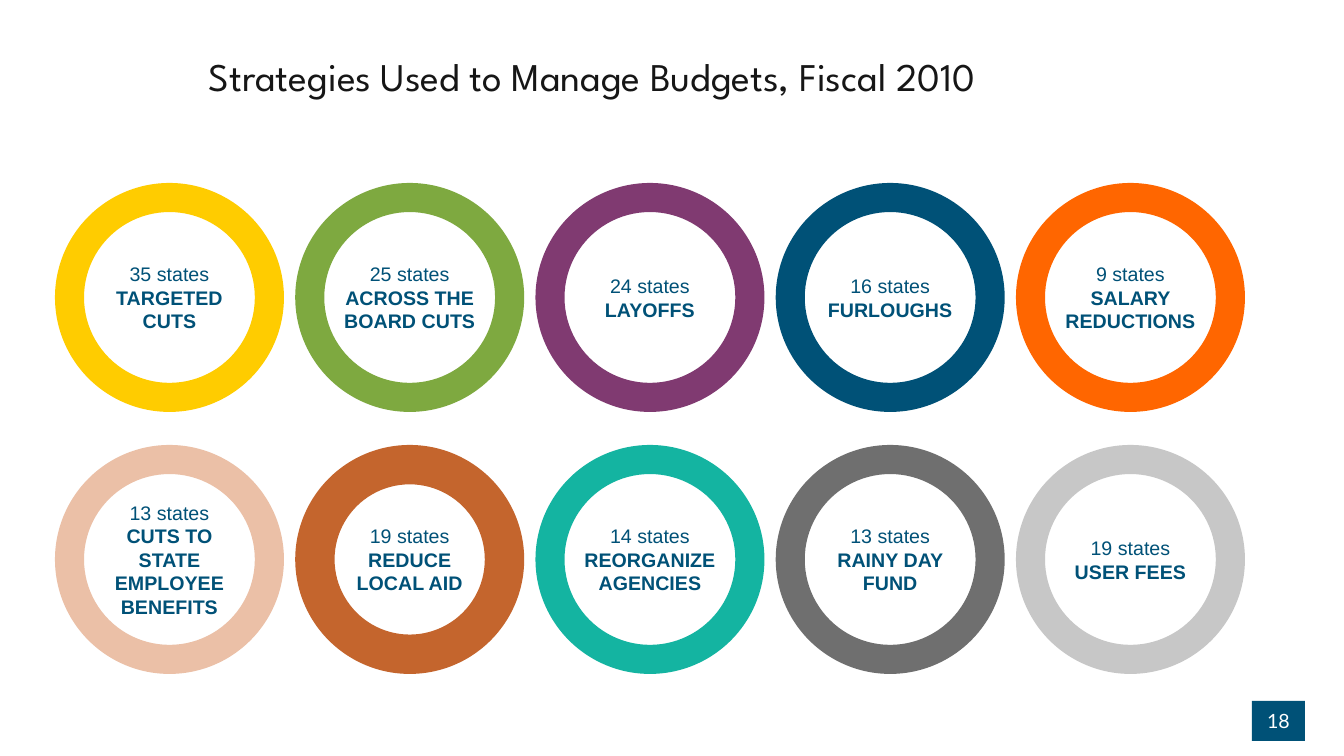
from pptx import Presentation
from pptx import util as u
from pptx.dml.color import RGBColor
from pptx.enum import shapes, text

NAVY = RGBColor(0x00, 0x51, 0x77)
YELLOW = RGBColor(0xFF, 0xCC, 0x00)
GREEN = RGBColor(0x7E, 0xA9, 0x40)
PURPLE = RGBColor(0x80, 0x3A, 0x71)
ORANGE = RGBColor(0xFF, 0x66, 0x00)
PEACH = RGBColor(0xEB, 0xC0, 0xA7)
RUST = RGBColor(0xC4, 0x65, 0x2D)
TEAL = RGBColor(0x14, 0xB4, 0xA1)
GRAY = RGBColor(0x6F, 0x6F, 0x6F)
SILVER = RGBColor(0xC7, 0xC7, 0xC7)
INK = RGBColor(0x16, 0x16, 0x16)
WHITE = RGBColor(0xFF, 0xFF, 0xFF)

TITLE = "Strategies Used to Manage Budgets, Fiscal 2010"
PAGE_NUMBER = "18"
THIN, THICK = 0.127, 0.172
STRATEGIES = [
    [
        ("35 states", "TARGETED CUTS", YELLOW, THIN),
        ("25 states", "ACROSS THE BOARD CUTS", GREEN, THIN),
        ("24 states", "LAYOFFS", PURPLE, THIN),
        ("16 states", "FURLOUGHS", NAVY, THIN),
        ("9 states", "SALARY REDUCTIONS", ORANGE, THIN),
    ],
    [
        ("13 states", "CUTS TO STATE EMPLOYEE BENEFITS", PEACH, THIN),
        ("19 states", "REDUCE LOCAL AID", RUST, THICK),
        ("14 states", "REORGANIZE AGENCIES", TEAL, THIN),
        ("13 states", "RAINY DAY FUND", GRAY, THIN),
        ("19 states", "USER FEES", SILVER, THIN),
    ],
]

FIRST_LEFT, LAST_LEFT = 55, 1016
FIRST_TOP, ROW_PITCH = 183, 262
RING_SIZE = 229


def px(length):
    return u.Emu(round(length * 914400 / 100.8))


def write(shape, lines, font_name, size, color, align):
    frame = shape.text_frame
    frame.word_wrap = True
    frame.vertical_anchor = text.MSO_ANCHOR.MIDDLE
    frame.text = "\n".join(lines)
    for index, paragraph in enumerate(frame.paragraphs):
        paragraph.alignment = align
        paragraph.font.name = font_name
        paragraph.font.size = u.Pt(size)
        paragraph.font.color.rgb = color
        paragraph.font.bold = index > 0


def add_filled(slide, kind, left, top, width, height, color):
    shape = slide.shapes.add_shape(kind, px(left), px(top), px(width), px(height))
    shape.shadow.inherit = False
    shape.fill.solid()
    shape.fill.fore_color.rgb = color
    shape.line.fill.background()
    return shape


def main():
    presentation = Presentation()
    presentation.slide_width = px(1344)
    presentation.slide_height = px(756)
    slide = presentation.slides.add_slide(presentation.slide_layouts[6])
    center = text.PP_ALIGN.CENTER

    title = slide.shapes.add_textbox(px(199), px(40), px(1067), px(77))
    write(title, [TITLE], "League Spartan", 28, INK, text.PP_ALIGN.LEFT)
    title.text_frame.paragraphs[0].line_spacing = 0.9

    badge = add_filled(slide, shapes.MSO_SHAPE.RECTANGLE, 1252, 701, 53, 40, NAVY)
    write(badge, [PAGE_NUMBER], "Lato", 14, WHITE, center)

    for row, strategies in enumerate(STRATEGIES):
        column_pitch = (LAST_LEFT - FIRST_LEFT) / (len(strategies) - 1)
        for column, (count, strategy, color, thickness) in enumerate(strategies):
            ring = add_filled(
                slide, shapes.MSO_SHAPE.DONUT,
                FIRST_LEFT + column * column_pitch, FIRST_TOP + row * ROW_PITCH,
                RING_SIZE, RING_SIZE, color,
            )
            ring.adjustments[0] = thickness
            write(ring, [count, strategy], "Arial", 14, NAVY, center)

    presentation.save("out.pptx")


if __name__ == "__main__":
    main()
